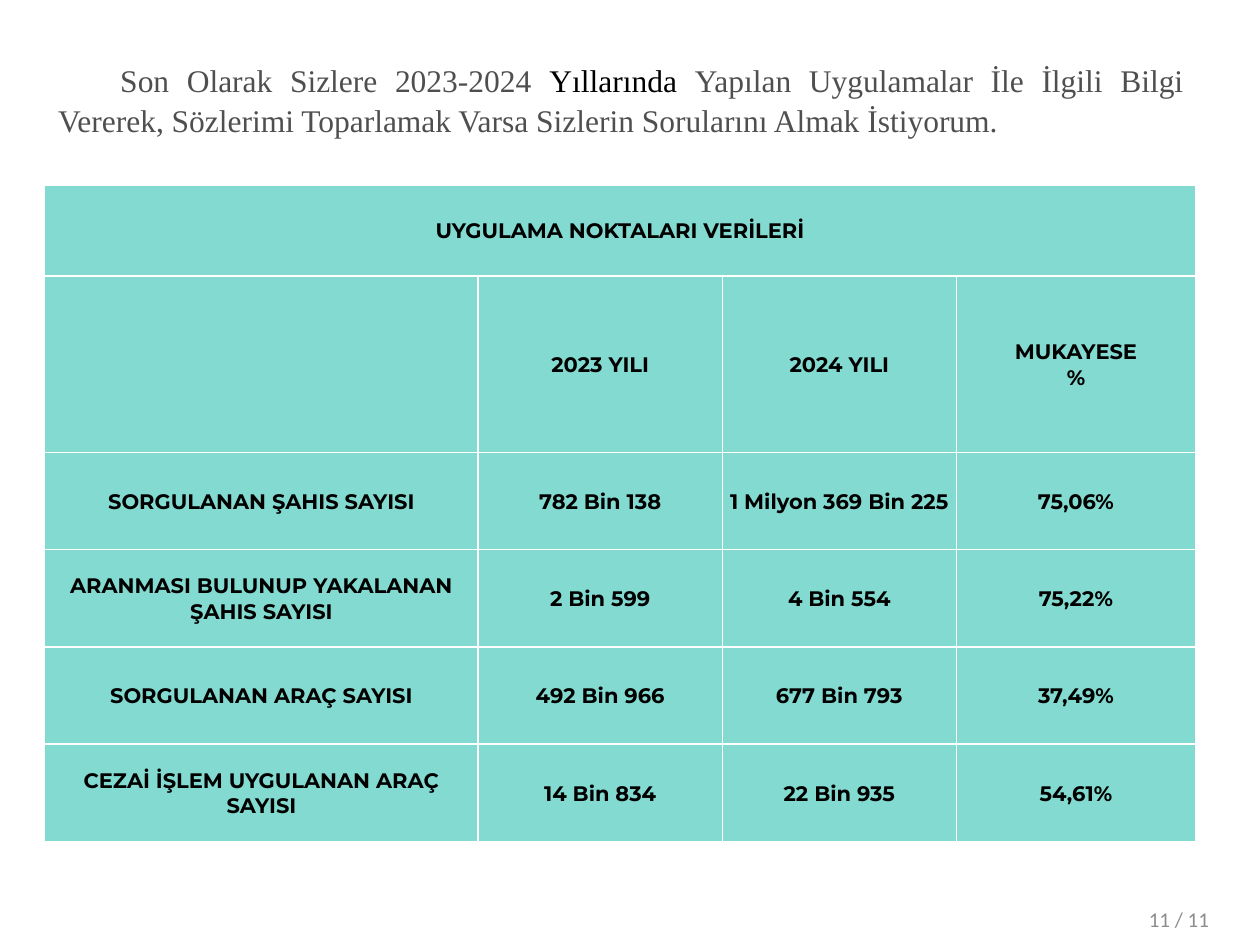
from dataclasses import dataclass

from lxml import etree
from pptx import Presentation
from pptx.dml.color import RGBColor
from pptx.enum.text import MSO_ANCHOR, MSO_AUTO_SIZE, PP_ALIGN
from pptx.oxml.ns import qn
from pptx.util import Cm, Pt

CENTER, JUSTIFY, LEFT = PP_ALIGN.CENTER, PP_ALIGN.JUSTIFY, PP_ALIGN.LEFT
TOP, MIDDLE = MSO_ANCHOR.TOP, MSO_ANCHOR.MIDDLE
NO_FIT = MSO_AUTO_SIZE.NONE
TITLE_ONLY = 5


@dataclass(frozen=True)
class Theme:
    """Colours, fonts and type sizes of the deck."""
    ink: str = "000000"
    intro_ink: str = "4F4F4F"
    number_ink: str = "8C8C8C"
    cell: str = "82DAD0"
    border: str = "FFFFFF"
    border_width: int = Pt(1)
    intro_font: str = "Times New Roman"
    table_font: str = "Montserrat"
    number_font: str = "Calibri"
    intro_size: int = Pt(18)
    small_size: int = Pt(12)


@dataclass(frozen=True)
class Box:
    """A rectangle in centimetres."""
    left: float
    top: float
    width: float
    height: float

    def lengths(self):
        """Return the four sides as slide lengths."""
        return [Cm(side) for side in (self.left, self.top, self.width, self.height)]


THEME = Theme()
INTRO = [
    ("Son Olarak Sizlere 2023-2024 ", THEME.intro_ink),
    ("Yıllarında ", THEME.ink),
    ("Yapılan Uygulamalar İle İlgili Bilgi Vererek, Sözlerimi Toparlamak "
     "Varsa Sizlerin Sorularını Almak İstiyorum.", THEME.intro_ink),
]
TABLE_ROWS = [
    ["UYGULAMA NOKTALARI VERİLERİ", "", "", ""],
    ["", "2023 YILI", "2024 YILI", "MUKAYESE\n%"],
    ["SORGULANAN ŞAHIS SAYISI", "782 Bin 138", "1 Milyon 369 Bin 225", "75,06%"],
    ["ARANMASI BULUNUP YAKALANAN ŞAHIS SAYISI", "2 Bin 599", "4 Bin 554", "75,22%"],
    ["SORGULANAN ARAÇ SAYISI", "492 Bin 966", "677 Bin 793", "37,49%"],
    ["CEZAİ İŞLEM UYGULANAN ARAÇ SAYISI", "14 Bin 834", "22 Bin 935", "54,61%"],
]
COLUMN_WIDTHS = [8.74, 4.92, 4.72, 4.82]
ROW_HEIGHTS = [1.83, 3.56] + [1.96] * 4


def add_span(para, text, font, size, color, bold=False):
    """Append one formatted run to a paragraph."""
    span = para.add_run()
    span.text = text
    span.font.name = font
    span.font.size = size
    span.font.bold = bold
    span.font.color.rgb = RGBColor.from_string(color)


def add_intro(page, box):
    """Place the opening sentence in the title placeholder."""
    title = page.shapes.title
    title.left, title.top, title.width, title.height = box.lengths()
    frame = title.text_frame
    frame.word_wrap = True
    frame.auto_size = NO_FIT
    frame.vertical_anchor = TOP
    para = frame.paragraphs[0]
    para.alignment = JUSTIFY
    para.line_spacing = 1.07
    para.space_before = Pt(0)
    para.space_after = Pt(8)
    properties = para._p.get_or_add_pPr()
    properties.set("marL", "0")
    properties.set("indent", str(Cm(1.25)))
    for text, color in INTRO:
        add_span(para, text, THEME.intro_font, THEME.intro_size, color)


def add_borders(cell):
    """Draw the four borders of a table cell."""
    properties = cell._tc.get_or_add_tcPr()
    for index, side in enumerate(("lnL", "lnR", "lnT", "lnB")):
        line = etree.Element(qn(f"a:{side}"), w=str(THEME.border_width))
        fill = etree.SubElement(line, qn("a:solidFill"))
        etree.SubElement(fill, qn("a:srgbClr"), val=THEME.border)
        properties.insert(index, line)


def fill_cell(cell, text):
    """Format a table cell and write its centred text."""
    cell.fill.solid()
    cell.fill.fore_color.rgb = RGBColor.from_string(THEME.cell)
    add_borders(cell)
    cell.vertical_anchor = MIDDLE
    cell.margin_left = cell.margin_right = cell.margin_top = Cm(0.03)
    cell.margin_bottom = 0
    para = cell.text_frame.paragraphs[0]
    para.alignment = CENTER
    for index, line in enumerate(text.split("\n") if text else []):
        if index:
            para.add_line_break()
        add_span(para, line, THEME.table_font, THEME.small_size, THEME.ink, bold=True)


def add_data_table(page, box):
    """Place the comparison table with its merged heading row."""
    shape = page.shapes.add_table(len(ROW_HEIGHTS), len(COLUMN_WIDTHS), *box.lengths())
    table = shape.table
    table.first_row = table.horz_banding = False
    for column, width in zip(table.columns, COLUMN_WIDTHS):
        column.width = Cm(width)
    for row, height, texts in zip(table.rows, ROW_HEIGHTS, TABLE_ROWS):
        row.height = Cm(height)
        for cell, text in zip(row.cells, texts):
            fill_cell(cell, text)
    table.cell(0, 0).merge(table.cell(0, len(COLUMN_WIDTHS) - 1))


def add_page_number(page, box):
    """Place the page count in the lower corner."""
    frame = page.shapes.add_textbox(*box.lengths()).text_frame
    frame.word_wrap = False
    para = frame.paragraphs[0]
    para.alignment = LEFT
    add_span(para, "11 / 11", THEME.number_font, THEME.small_size, THEME.number_ink)


def main():
    """Build the deck and save it."""
    deck = Presentation()
    deck.slide_width, deck.slide_height = Cm(25.4), Cm(19.05)
    page = deck.slides.add_slide(deck.slide_layouts[TITLE_ONLY])
    add_intro(page, Box(0.92, 1.04, 23.2, 1.9))
    add_data_table(page, Box(0.9, 3.73, sum(COLUMN_WIDTHS), sum(ROW_HEIGHTS)))
    add_page_number(page, Box(22.91, 18.16, 2.4, 0.76))
    deck.save("out.pptx")


if __name__ == "__main__":
    main()
